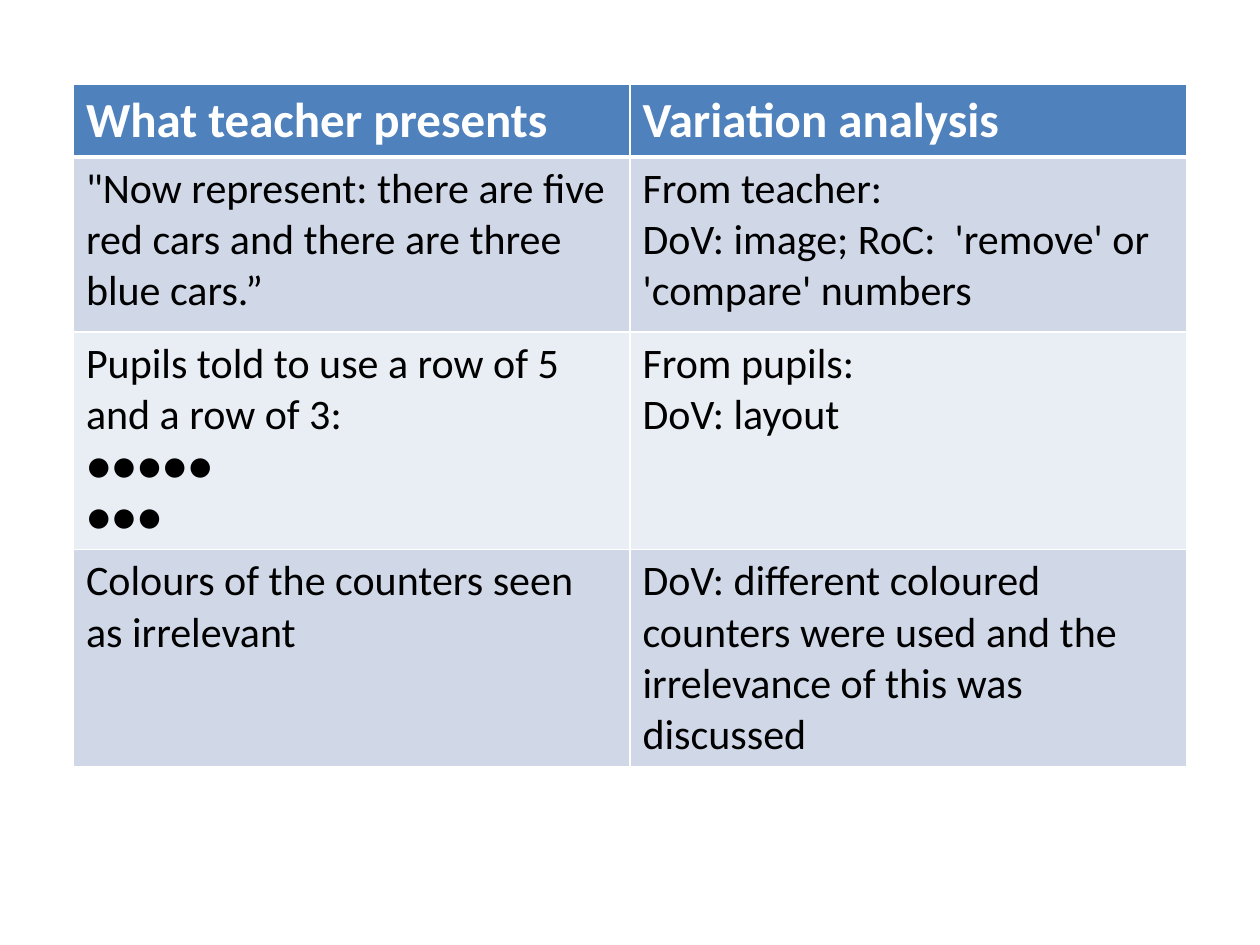
from dataclasses import dataclass

from lxml.etree import SubElement
from pptx import Presentation
from pptx.dml.color import RGBColor
from pptx.oxml.ns import qn
from pptx.util import Cm, Pt


@dataclass(frozen=True)
class Theme:
    font: str = "Calibri"
    header_fill: str = "4F81BD"
    band_fills: tuple = ("D0D8E8", "E9EDF4")
    header_text: str = "FFFFFF"
    body_text: str = "000000"
    rule: str = "FFFFFF"
    header_size: int = 28
    body_size: int = 24
    thin: int = 1
    thick: int = 3


THEME = Theme()

# Each cell is a list of paragraphs
HEADINGS = [["What teacher presents"], ["Variation analysis"]]
EPISODES = [
    [["\"Now represent: there are five red cars and there are three blue cars.”"],
     ["From teacher:", "DoV: image; RoC:  'remove' or 'compare' numbers"]],
    [["Pupils told to use a row of 5 and a row of 3:", "●●●●●", "●●●"],
     ["From pupils:", "DoV: layout"]],
    [["Colours of the counters seen as irrelevant"],
     ["DoV: different coloured counters were used and the irrelevance of this was discussed"]],
]


def rule_cell(cell, widths):
    """Draw the cell's edges; widths maps an edge tag to points."""
    properties = cell._tc.get_or_add_tcPr()
    for edge, width in widths.items():
        line = SubElement(properties, qn(f"a:{edge}"), w=str(Pt(width)))
        paint = SubElement(line, qn("a:solidFill"))
        SubElement(paint, qn("a:srgbClr"), val=THEME.rule)


def fill_cell(cell, paragraphs, fill, text_color, font_format):
    cell.fill.solid()
    cell.fill.fore_color.rgb = RGBColor.from_string(fill)
    frame = cell.text_frame
    for index, wording in enumerate(paragraphs):
        paragraph = frame.add_paragraph() if index else frame.paragraphs[0]
        run = paragraph.add_run()
        run.text = wording
        for attribute, value in font_format.items():
            setattr(run.font, attribute, value)
        run.font.color.rgb = RGBColor.from_string(text_color)


def add_analysis_table(slide, left, top, width, header_height, episode_height):
    rows = [HEADINGS, *EPISODES]
    heights = [header_height] + [episode_height] * len(EPISODES)
    table = slide.shapes.add_table(
        len(rows), len(HEADINGS), left, top, width, sum(heights)).table

    header_font = {"name": THEME.font, "size": Pt(THEME.header_size), "bold": True}
    body_font = {"name": THEME.font, "size": Pt(THEME.body_size), "bold": False}

    for row_index, (row, height) in enumerate(zip(rows, heights)):
        table.rows[row_index].height = height
        is_header = row_index == 0
        if is_header:
            style = (THEME.header_fill, THEME.header_text, header_font)
        else:
            band = THEME.band_fills[(row_index - 1) % len(THEME.band_fills)]
            style = (band, THEME.body_text, body_font)
        # The heavy rule separates the header from the episodes
        edges = {
            "lnL": THEME.thin,
            "lnR": THEME.thin,
            "lnT": THEME.thick if row_index == 1 else THEME.thin,
            "lnB": THEME.thick if is_header else THEME.thin,
        }
        for column_index, paragraphs in enumerate(row):
            cell = table.cell(row_index, column_index)
            rule_cell(cell, edges)
            fill_cell(cell, paragraphs, *style)


def main():
    presentation = Presentation()
    presentation.slide_width, presentation.slide_height = Cm(25.4), Cm(19.05)
    slide = presentation.slides.add_slide(presentation.slide_layouts[6])

    # Teaching episodes with their analysis
    add_analysis_table(slide, left=Cm(1.48), top=Cm(1.7), width=Cm(22.44),
                       header_height=Cm(1.14), episode_height=Cm(3.53))

    presentation.save("out.pptx")


if __name__ == "__main__":
    main()
